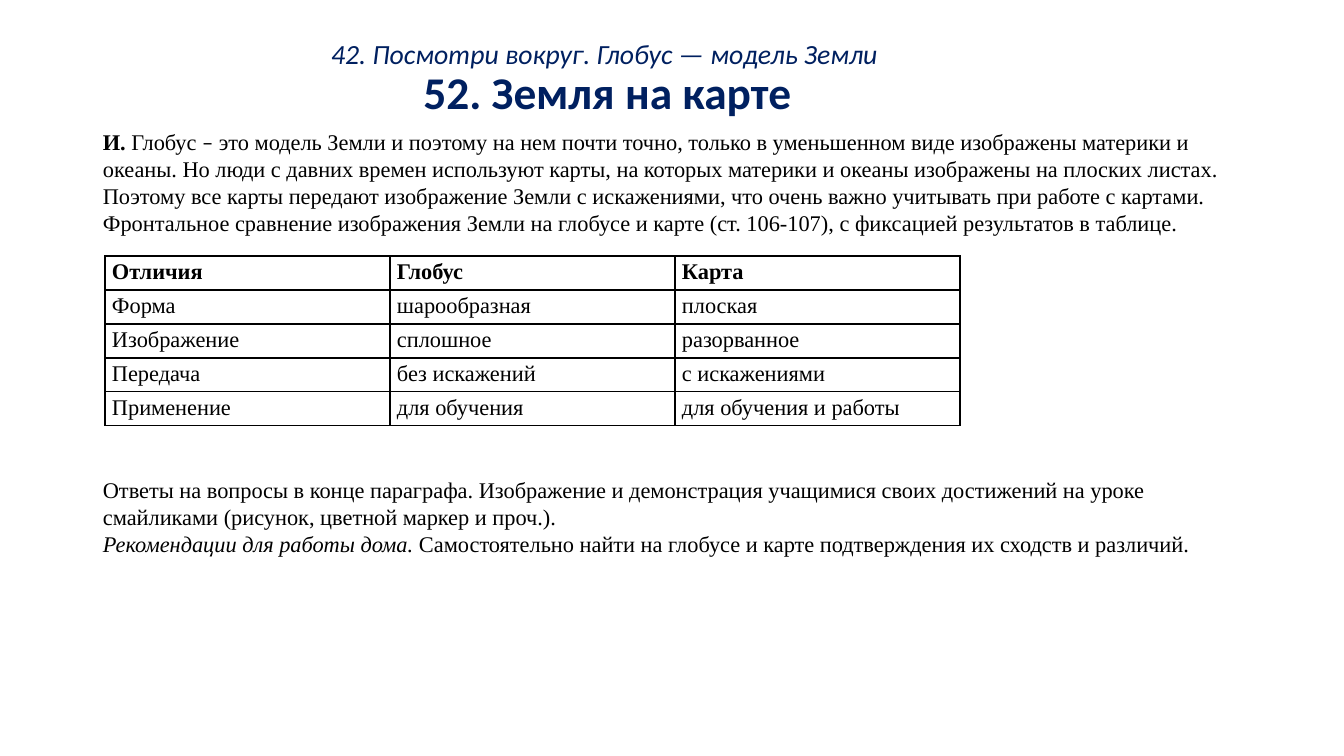
"""Build the lesson slide comparing the globe and the map."""
from dataclasses import dataclass

from lxml.etree import SubElement
from pptx import Presentation
from pptx.dml.color import RGBColor
from pptx.enum.text import MSO_ANCHOR, MSO_AUTO_SIZE, PP_ALIGN
from pptx.oxml.ns import qn
from pptx.util import Emu, Pt

COLORS = {"heading": "002060", "ink": "000000"}
HEADING_FONT, BODY_FONT = "Calibri", "Times New Roman"
BODY_SIZE = 16


@dataclass(frozen=True)
class Phrase:
    text: str
    bold: bool = False
    italic: bool = False
    font: str = BODY_FONT
    size: float = BODY_SIZE


@dataclass(frozen=True)
class Passage:
    phrases: tuple[Phrase, ...]
    space_before: int = 0


HEADING = (
    Phrase("42. Посмотри вокруг. Глобус — модель Земли ", italic=True, font=HEADING_FONT, size=19.8),
    Phrase("52. Земля на карте", bold=True, font=HEADING_FONT, size=32.4),
)
LESSON = (
    Passage((
        Phrase("И. ", bold=True),
        Phrase("Глобус "),
        Phrase("–", font=HEADING_FONT),
        Phrase(" это модель Земли и поэтому на нем почти точно, только в уменьшенном виде "
               "изображены материки и океаны. Но люди с давних времен используют карты, на которых "
               "материки и океаны изображены на плоских листах. Поэтому все карты передают "
               "изображение Земли с искажениями, что очень важно учитывать при работе с картами."),
    )),
    Passage((
        Phrase("Фронтальное сравнение изображения Земли на глобусе и карте (ст. 106-107), "
               "с фиксацией результатов в таблице."),
    )),
    Passage((
        Phrase("Ответы на вопросы в конце параграфа. Изображение и демонстрация учащимися своих "
               "достижений на уроке смайликами (рисунок, цветной маркер и проч.)."),
    ), space_before=172),
    Passage((
        Phrase("Рекомендации для работы дома. ", italic=True),
        Phrase("Самостоятельно найти на глобусе и карте подтверждения их сходств и различий."),
    )),
)
DIFFERENCES = (
    ("Отличия", "Глобус", "Карта"),
    ("Форма", "шарообразная", "плоская"),
    ("Изображение", "сплошное", "разорванное"),
    ("Передача", "без искажений", "с искажениями"),
    ("Применение", "для обучения", "для обучения и работы"),
)
COLUMN_WIDTH, ROW_HEIGHT = 285, 34


def px(length: int) -> Emu:
    """Turn pixels into EMU."""
    return Emu(round(length * 914400 / 100.8))


def set_font(font, size: float, name: str, color: str, bold: bool = False, italic: bool = False) -> None:
    """Apply one complete character style."""
    font.size, font.name, font.bold, font.italic = Pt(size), name, bold, italic
    font.color.rgb = RGBColor.from_string(COLORS[color])


def add_phrase(paragraph, phrase: Phrase, color: str) -> None:
    """Append a styled run to a paragraph."""
    run = paragraph.add_run()
    run.text = phrase.text
    set_font(run.font, phrase.size, phrase.font, color, phrase.bold, phrase.italic)


def fill_heading(title) -> None:
    """Place the title and write its two lines."""
    title.left, title.top, title.width, title.height = px(93), px(40), px(1029), px(80)
    frame = title.text_frame
    frame.auto_size, frame.vertical_anchor = MSO_AUTO_SIZE.NONE, MSO_ANCHOR.MIDDLE
    paragraph = frame.paragraphs[0]
    paragraph.alignment, paragraph.line_spacing = PP_ALIGN.CENTER, 0.9
    previous_topic, topic = HEADING
    paragraph.font.size = Pt(previous_topic.size)
    add_phrase(paragraph, previous_topic, "heading")
    paragraph.add_line_break()
    add_phrase(paragraph, topic, "heading")


def add_lesson(slide) -> None:
    """Write the lesson text above and below the table."""
    lesson = slide.shapes.add_textbox(px(93), px(120), px(1152), px(445))
    frame = lesson.text_frame
    frame.word_wrap, frame.vertical_anchor = True, MSO_ANCHOR.MIDDLE
    frame.auto_size = MSO_AUTO_SIZE.SHAPE_TO_FIT_TEXT
    for index, passage in enumerate(LESSON):
        paragraph = frame.add_paragraph() if index else frame.paragraphs[0]
        if passage.space_before:
            paragraph.space_before = Pt(passage.space_before)
        for phrase in passage.phrases:
            add_phrase(paragraph, phrase, "ink")


def add_borders(cell) -> None:
    """Draw thin lines on all four sides of a cell."""
    properties = cell._tc.get_or_add_tcPr()
    for position, side in enumerate(("a:lnL", "a:lnR", "a:lnT", "a:lnB")):
        line = SubElement(properties, qn(side), w=str(Pt(1)))
        properties.insert(position, line)
        fill = SubElement(line, qn("a:solidFill"))
        SubElement(fill, qn("a:srgbClr"), val=COLORS["ink"])


def add_differences(slide) -> None:
    """Build the comparison table."""
    columns, rows = len(DIFFERENCES[0]), len(DIFFERENCES)
    table = slide.shapes.add_table(rows, columns, px(105), px(256),
                                   px(columns * COLUMN_WIDTH), px(rows * ROW_HEIGHT)).table
    table.first_row = table.horz_banding = False
    for row_index, values in enumerate(DIFFERENCES):
        for column_index, value in enumerate(values):
            cell = table.cell(row_index, column_index)
            cell.margin_left = cell.margin_right = px(7)
            cell.margin_top = cell.margin_bottom = 0
            cell.fill.background()
            add_borders(cell)
            paragraph = cell.text_frame.paragraphs[0]
            paragraph.text = value
            paragraph.line_spacing, paragraph.space_after = 1.15, Pt(10)
            set_font(paragraph.font, BODY_SIZE, BODY_FONT, "ink", bold=row_index == 0)


def main() -> None:
    """Create and save the presentation."""
    presentation = Presentation()
    presentation.slide_width, presentation.slide_height = px(1344), px(756)
    slide = presentation.slides.add_slide(presentation.slide_layouts[5])
    fill_heading(slide.shapes.title)
    add_differences(slide)
    add_lesson(slide)
    presentation.save("out.pptx")


if __name__ == "__main__":
    main()
